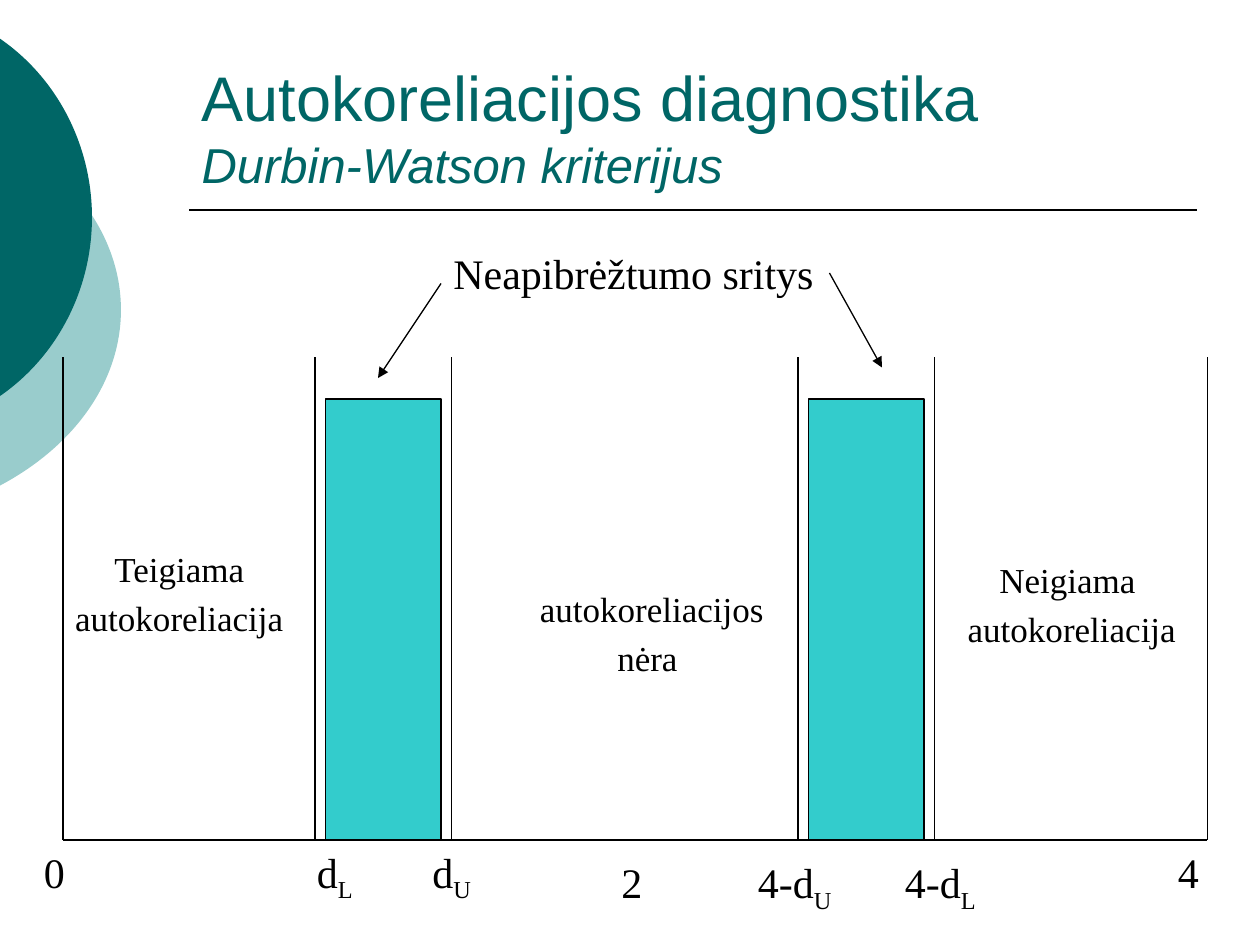
from lxml.etree import SubElement
from pptx import Presentation
from pptx.dml.color import RGBColor
from pptx.enum.shapes import MSO_CONNECTOR, MSO_SHAPE
from pptx.enum.text import MSO_ANCHOR, MSO_AUTO_SIZE, PP_ALIGN
from pptx.oxml.ns import qn
from pptx.util import Pt

DARK_TEAL = RGBColor(0x00, 0x66, 0x66)
PALE_TEAL = RGBColor(0x99, 0xCC, 0xCC)
TURQUOISE = RGBColor(0x33, 0xCC, 0xCC)
BLACK = RGBColor(0, 0, 0)
SERIF = "Times New Roman"

AXIS_Y, BOUND_TOP = 480, 204
BAND_TOP, BAND_INSET = 228, 6
BOUNDS = (36, 180, 258, 456, 534, 690)
UNCERTAIN_ZONES = (BOUNDS[1:3], BOUNDS[3:5])

# text, subscript, left, top, width
AXIS_LABELS = (
    ("4", "", 666, 480, 26.6),
    ("0", "", 18, 480, 18),
    ("d", "L", 174, 480, 42),
    ("4-d", "U", 426, 486, 66),
    ("d", "U", 240, 480, 42),
    ("4-d", "L", 510, 486, 66),
    ("2", "", 348, 486, 24),
)
# lines, left, top, top margin
ZONE_LABELS = (
    ("autokoreliacijos \nnėra  ", 300, 318, 22),
    ("Teigiama \nautokoreliacija ", 30, 306, 0),
    ("Neigiama  \nautokoreliacija ", 540, 312, 0),
)
# box (left, top, width, height), right edge, control x, upper half ys, colour
DISCS = (
    ((-255, 54, 324, 246), 69.12, 43.2, (76.3, 99.4, 136.8, 177.1), PALE_TEAL),
    ((-191, 0, 243.5, 248.4), 52.56, 33.1, (21.6, 44.6, 83.5, 124.2), DARK_TEAL),
)


def style(font, size, color=BLACK, name=SERIF):
    font.size, font.name = Pt(size), name
    font.color.rgb = color


def add_cut_disc(slide, box, right, control, upper_ys, color):
    """Draw a disc cut at the left slide edge, as two mirrored Bezier curves."""
    left, top, width, height = box
    middle = upper_ys[-1]
    upper = list(zip((-0.72, control, right, right), upper_ys))
    lower = [(x, 2 * middle - y) for x, y in reversed(upper[:-1])]
    builder = slide.shapes.build_freeform(*upper[0], scale=Pt(1))
    builder.add_line_segments(upper[1:] + lower, close=True)
    disc = builder.convert_to_shape()
    disc.left, disc.top, disc.width, disc.height = (Pt(value) for value in box)

    outline = disc._element.spPr.find(".//" + qn("a:path"))
    outline.set("w", str(Pt(width)))
    outline.set("h", str(Pt(height)))
    for segment in list(outline):
        outline.remove(segment)

    def add_segment(kind, points):
        segment = SubElement(outline, qn(kind))
        for x, y in points:
            SubElement(segment, qn("a:pt"), x=str(Pt(x - left)), y=str(Pt(y - top)))

    add_segment("a:moveTo", upper[:1])
    add_segment("a:cubicBezTo", upper[1:])
    add_segment("a:cubicBezTo", lower)
    add_segment("a:close", ())
    disc.shadow.inherit = False
    disc.fill.solid()
    disc.fill.fore_color.rgb = color
    disc.line.fill.background()


def add_line(slide, start, end, width=0.75, arrow=False):
    line = slide.shapes.add_connector(
        MSO_CONNECTOR.STRAIGHT, *(Pt(value) for value in start + end))
    line.line.color.rgb = BLACK
    line.line.width = Pt(width)
    properties = line._element.spPr
    if arrow:
        SubElement(properties.find(qn("a:ln")), qn("a:tailEnd"), type="triangle")
    SubElement(properties, qn("a:effectLst"))


def add_label(slide, text, subscript, left, top, width):
    label = slide.shapes.add_textbox(Pt(left), Pt(top), Pt(width), Pt(36))
    frame = label.text_frame
    frame.word_wrap = True
    frame.auto_size = MSO_AUTO_SIZE.SHAPE_TO_FIT_TEXT
    frame.text = text
    paragraph = frame.paragraphs[0]
    if subscript:
        lowered = paragraph.add_run()
        lowered.text = subscript
        lowered.font._element.set("baseline", "-25000")
    for run in paragraph.runs:
        style(run.font, 24)


def add_zone_label(slide, text, left, top, margin):
    label = slide.shapes.add_textbox(Pt(left), Pt(top), Pt(150), Pt(66))
    frame = label.text_frame
    frame.word_wrap = False
    frame.vertical_anchor = MSO_ANCHOR.MIDDLE
    frame.margin_top, frame.margin_bottom = Pt(margin), Pt(4)
    frame.text = text
    for paragraph in frame.paragraphs:
        paragraph.alignment = PP_ALIGN.CENTER
        paragraph.line_spacing = Pt(28)
        style(paragraph.runs[0].font, 20)


def add_band(slide, zone_left, zone_right):
    band = slide.shapes.add_shape(
        MSO_SHAPE.RECTANGLE, Pt(zone_left + BAND_INSET), Pt(BAND_TOP),
        Pt(zone_right - zone_left - 2 * BAND_INSET), Pt(AXIS_Y - BAND_TOP))
    band.shadow.inherit = False
    band.fill.solid()
    band.fill.fore_color.rgb = TURQUOISE
    band.line.color.rgb = BLACK
    band.line.width = Pt(0.75)


def set_title(slide):
    title = slide.shapes.title
    title.left, title.top, title.width, title.height = Pt(108), Pt(24), Pt(576), Pt(90)
    frame = title.text_frame
    frame.vertical_anchor = MSO_ANCHOR.BOTTOM
    frame.text = "Autokoreliacijos diagnostika\vDurbin-Watson kriterijus"
    paragraph = frame.paragraphs[0]
    paragraph.alignment = PP_ALIGN.LEFT
    heading, criterion = paragraph.runs
    style(heading.font, 36, DARK_TEAL, "Arial")
    style(criterion.font, 28, DARK_TEAL, "Arial")
    criterion.font.italic = True


def main():
    presentation = Presentation()
    presentation.slide_width, presentation.slide_height = Pt(720), Pt(540)
    slide = presentation.slides.add_slide(presentation.slide_layouts[5])

    for disc in DISCS:
        add_cut_disc(slide, *disc)
    add_line(slide, (108, 120), (684, 120), width=1)
    set_title(slide)

    add_line(slide, (BOUNDS[0], AXIS_Y), (BOUNDS[-1], AXIS_Y))
    for x in BOUNDS:
        add_line(slide, (x, AXIS_Y), (x, BOUND_TOP))
    for axis_label in AXIS_LABELS:
        add_label(slide, *axis_label)
    for zone_label in ZONE_LABELS:
        add_zone_label(slide, *zone_label)

    add_label(slide, "Neapibrėžtumo sritys", "", 252, 138, 318)
    add_line(slide, (252, 162), (216, 216), arrow=True)
    add_line(slide, (474, 156), (504, 210), arrow=True)
    for zone in UNCERTAIN_ZONES:
        add_band(slide, *zone)

    presentation.save("out.pptx")


if __name__ == "__main__":
    main()
